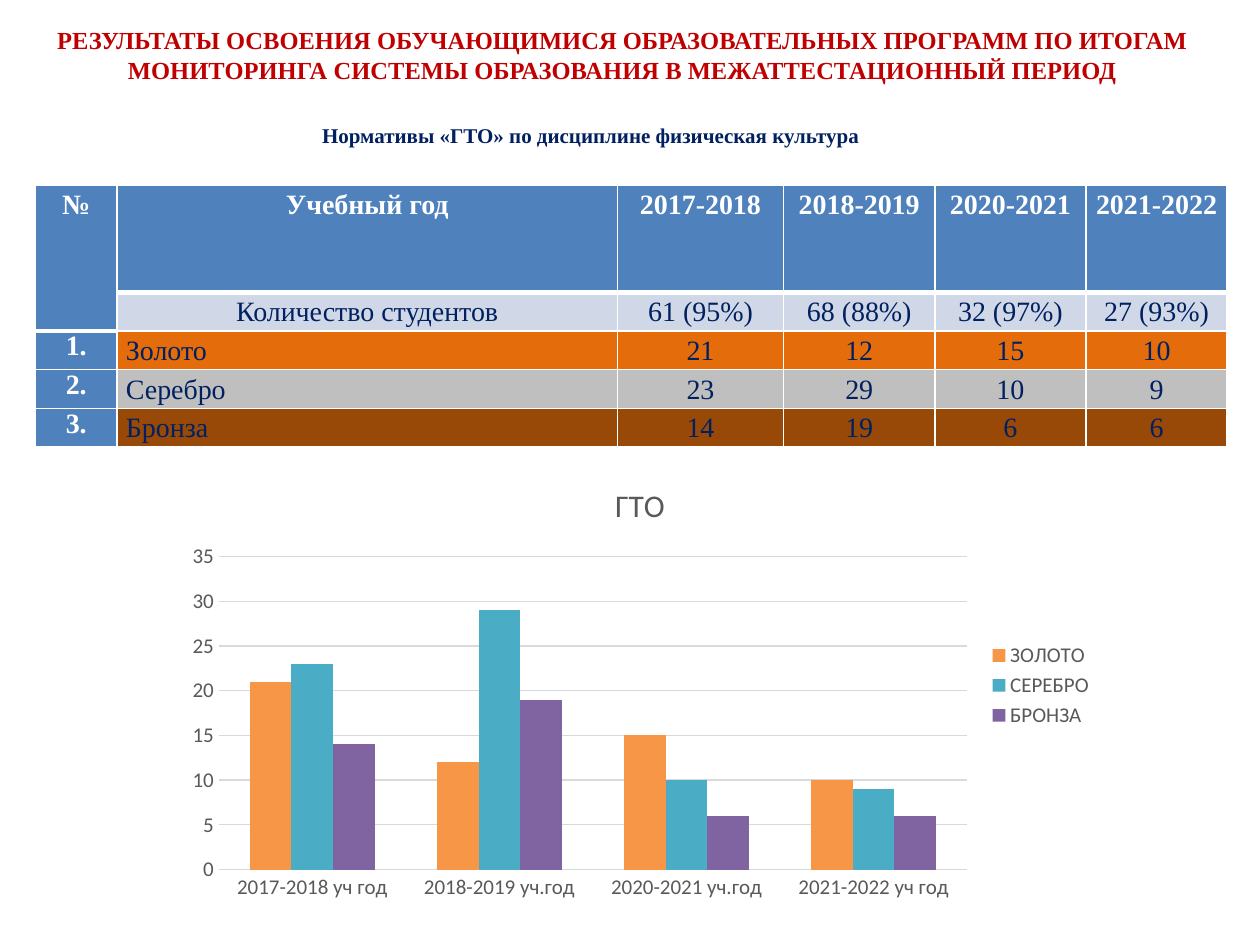
from lxml.etree import SubElement
from pptx import Presentation
from pptx.chart.data import CategoryChartData
from pptx.dml.color import RGBColor
from pptx.enum.chart import XL_CHART_TYPE, XL_LEGEND_POSITION, XL_TICK_MARK
from pptx.enum.text import MSO_ANCHOR, PP_ALIGN
from pptx.oxml.ns import qn
from pptx.util import Inches, Pt

SERIF, SANS = "Times New Roman", "Calibri"
WHITE, NAVY, RED, BLUE, GRAY = "FFFFFF", "002060", "C00000", "4F81BD", "595959"
TITLE = ("РЕЗУЛЬТАТЫ ОСВОЕНИЯ ОБУЧАЮЩИМИСЯ ОБРАЗОВАТЕЛЬНЫХ ПРОГРАММ ПО ИТОГАМ "
         "МОНИТОРИНГА СИСТЕМЫ ОБРАЗОВАНИЯ В МЕЖАТТЕСТАЦИОННЫЙ ПЕРИОД")
SUBTITLE = "Нормативы «ГТО» по дисциплине физическая культура"

YEARS = ["2017-2018", "2018-2019", "2020-2021", "2021-2022"]
STUDENTS = ["61 (95%)", "68 (88%)", "32 (97%)", "27 (93%)"]
MEDALS = [
    ("Золото", [21, 12, 15, 10], "E46C0A", "F79646"),
    ("Серебро", [23, 29, 10, 9], "BFBFBF", "4BACC6"),
    ("Бронза", [14, 19, 6, 6], "984807", "8064A2"),
]
CATEGORIES = ["2017-2018 уч год", "2018-2019 уч.год", "2020-2021 уч.год", "2021-2022 уч год"]
ROWS = [
    (["№", "Учебный год", *YEARS], BLUE),
    (["", "Количество студентов", *STUDENTS], "D0D8E8"),
] + [([f"{number}.", name, *map(str, counts)], fill)
     for number, (name, counts, fill, _) in enumerate(MEDALS, 1)]
COLUMN_WIDTHS = [0.65, 3.97, 1.32, 1.2, 1.2, 1.12]
ROW_HEIGHTS = [0.85] + [0.3] * 4


def color(value):
    return RGBColor.from_string(value)


def set_font(font, name, size, value, bold=False):
    font.name, font.size, font.bold = name, Pt(size), bold
    font.color.rgb = color(value)


def add_text(page, area, text, size, value, anchor, right=0.1):
    box = page.shapes.add_textbox(*map(Inches, area))
    frame = box.text_frame
    frame.word_wrap = True
    frame.vertical_anchor = anchor
    frame.margin_right = Inches(right)
    para = frame.paragraphs[0]
    para.text = text
    para.alignment = PP_ALIGN.CENTER
    set_font(para.font, SERIF, size, value, True)


def add_borders(cell, top, bottom):
    properties = cell._tc.get_or_add_tcPr()
    for side, width in (("L", 1), ("R", 1), ("T", top), ("B", bottom)):
        line = SubElement(properties, qn(f"a:ln{side}"), w=str(Pt(width)))
        SubElement(SubElement(line, qn("a:solidFill")), qn("a:srgbClr"), val=WHITE)


def fill_cell(cell, text, row, column, fill):
    header = row == 0 or column == 0
    header_end = 1 if column == 0 else 0
    add_borders(cell, 3 if row == header_end + 1 else 1, 3 if row == header_end else 1)
    cell.fill.solid()
    cell.fill.fore_color.rgb = color(BLUE if header else fill)
    cell.margin_left = cell.margin_right = Inches(0.07)
    cell.margin_top = cell.margin_bottom = 0
    para = cell.text_frame.paragraphs[0]
    para.text = text
    name_cell = row > 1 and column == 1
    para.alignment = PP_ALIGN.LEFT if name_cell else PP_ALIGN.CENTER
    if row < 2 or column > 0:
        para.line_spacing = 1.15
        para.space_after = Pt(0 if name_cell else 10)
    set_font(para.font, SERIF, 16, WHITE if header else NAVY, header)


def add_results_table(page):
    area = (0.28, 1.47, sum(COLUMN_WIDTHS), sum(ROW_HEIGHTS))
    table = page.shapes.add_table(len(ROWS), len(COLUMN_WIDTHS), *map(Inches, area)).table
    for column, width in zip(table.columns, COLUMN_WIDTHS):
        column.width = Inches(width)
    for row, height in zip(table.rows, ROW_HEIGHTS):
        row.height = Inches(height)
    for row, (texts, fill) in enumerate(ROWS):
        for column, text in enumerate(texts):
            fill_cell(table.cell(row, column), text, row, column, fill)
    table.cell(0, 0).merge(table.cell(1, 0))


def add_medal_chart(page):
    data = CategoryChartData()
    data.categories = CATEGORIES
    for name, counts, *_ in MEDALS:
        data.add_series(name.upper(), counts)
    area = map(Inches, (1.38, 3.67, 7.4, 3.54))
    chart = page.shapes.add_chart(XL_CHART_TYPE.COLUMN_CLUSTERED, *area, data).chart
    set_font(chart.font, SANS, 10, "000000")

    chart.has_title = True
    para = chart.chart_title.text_frame.paragraphs[0]
    para.text = "ГТО"
    set_font(para.font, SANS, 18, GRAY)

    chart.has_legend = True
    chart.legend.position = XL_LEGEND_POSITION.RIGHT
    chart.legend.include_in_layout = False
    set_font(chart.legend.font, SANS, 12, GRAY)

    for axis in (chart.category_axis, chart.value_axis):
        axis.major_tick_mark = axis.minor_tick_mark = XL_TICK_MARK.NONE
        axis.format.line.fill.background()
        set_font(axis.tick_labels.font, SANS, 12, GRAY)
    values = chart.value_axis
    values.minimum_scale, values.maximum_scale, values.major_unit = 0, 35, 5
    grid = values.major_gridlines.format.line
    grid.color.rgb = color("D9D9D9")
    grid.width = Pt(0.75)

    plot = chart.plots[0]
    plot.vary_by_categories = False
    plot.gap_width, plot.overlap = 150, 0
    for series, (*_, fill) in zip(plot.series, MEDALS):
        series.format.fill.solid()
        series.format.fill.fore_color.rgb = color(fill)


def main():
    deck = Presentation()
    deck.slide_width, deck.slide_height = Inches(10), Inches(7.5)
    page = deck.slides.add_slide(deck.slide_layouts[6])
    add_text(page, (-0.12, -0.11, 10.12, 1.09), TITLE, 14, RED, MSO_ANCHOR.MIDDLE)
    add_results_table(page)
    add_text(page, (2.32, 0.92, 5.04, 0.61), SUBTITLE, 12, NAVY, MSO_ANCHOR.TOP, right=0.4)
    add_medal_chart(page)
    deck.save("out.pptx")


if __name__ == "__main__":
    main()
